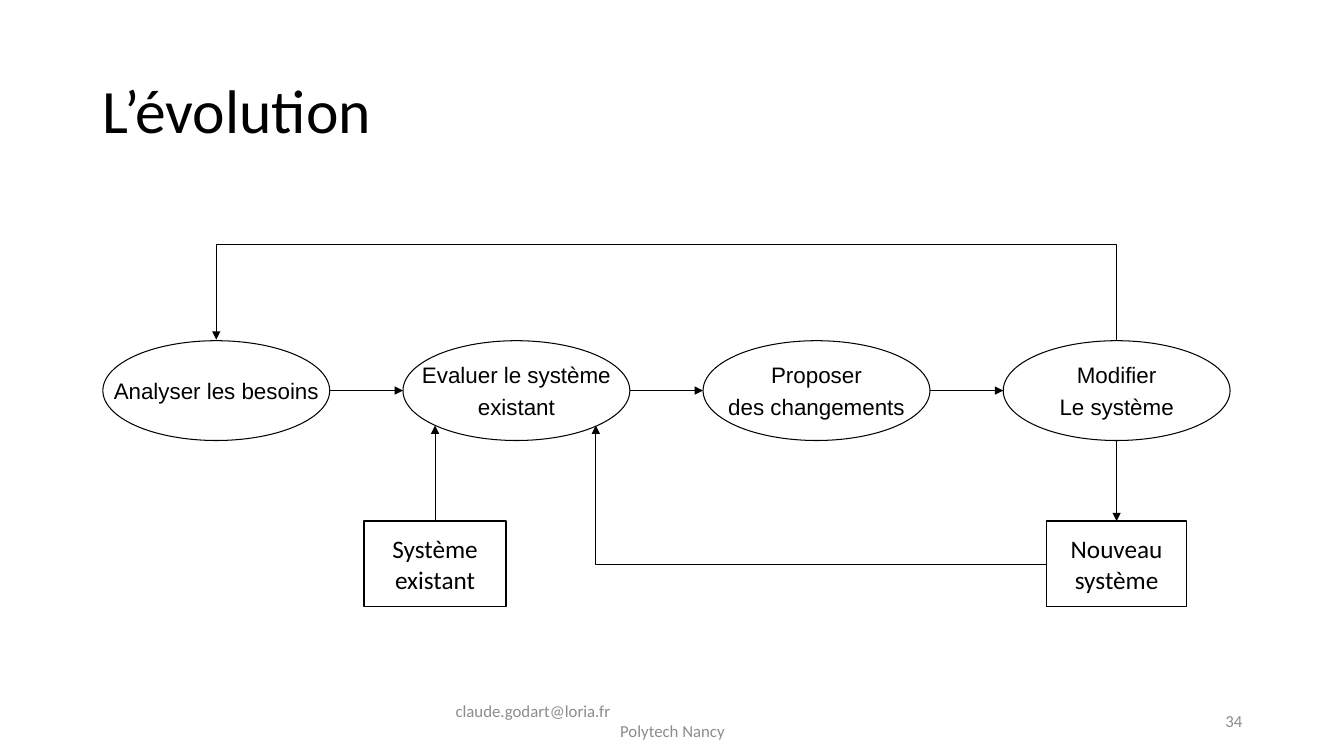
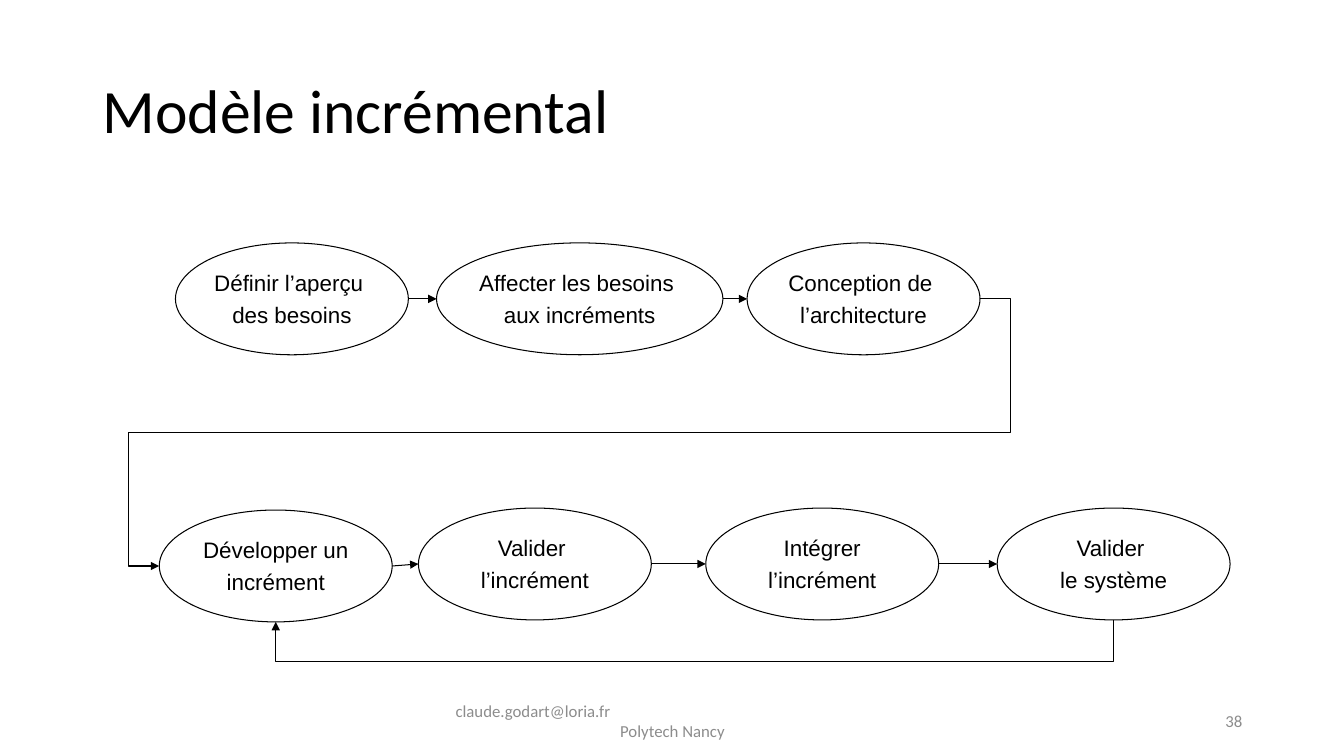
from dataclasses import dataclass

from lxml import etree
from pptx import Presentation
from pptx import util as u
from pptx.dml import color
from pptx.enum import shapes, text
from pptx.oxml import ns


@dataclass(frozen=True)
class Theme:
    ink: color.RGBColor = color.RGBColor(0x00, 0x00, 0x00)
    muted: color.RGBColor = color.RGBColor(0x8C, 0x8C, 0x8C)
    heading_font: str = "Calibri"
    step_font: str = "Arial"
    title_size: int = 44
    product_size: int = 18
    step_size: int = 16
    footer_size: int = 12
    step_spacing: float = 3.7
    step_line: float = 0.75
    product_line: float = 1


@dataclass(frozen=True)
class Box:
    left: float
    top: float
    width: float
    height: float

    def at(self, across, down):
        return self.left + across * self.width, self.top + down * self.height

    def inside(self, left, top, width, height):
        return Box(self.left + left, self.top + top, width, height)

    def lengths(self):
        return [u.Inches(value) for value in (self.left, self.top, self.width, self.height)]


THEME = Theme()
TITLE = Box(0.92, 0.4, 11.5, 1.45)
FOOTER = Box(4.42, 6.95, 4.5, 0.4)
NUMBER = Box(9.42, 6.95, 3, 0.4)
LEFT, CENTER, RIGHT = text.PP_ALIGN.LEFT, text.PP_ALIGN.CENTER, text.PP_ALIGN.RIGHT


def write(shape, content, font, size, ink, alignment, wrap=True, spacing=0):
    frame = shape.text_frame
    frame.text = content
    frame.word_wrap = wrap
    frame.vertical_anchor = text.MSO_ANCHOR.MIDDLE
    for paragraph in frame.paragraphs:
        paragraph.alignment = alignment
        paragraph.space_before = u.Pt(spacing)
        paragraph.font.name = font
        paragraph.font.size = u.Pt(size)
        paragraph.font.color.rgb = ink
    return frame.paragraphs


def add_text(slide, box, content, size, ink, alignment=LEFT):
    shape = slide.shapes.add_textbox(*box.lengths())
    return write(shape, content, THEME.heading_font, size, ink, alignment)


def add_outline(slide, kind, box, line_width):
    shape = slide.shapes.add_shape(kind, *box.lengths())
    shape.shadow.inherit = False
    shape.fill.background()
    shape.line.color.rgb = THEME.ink
    shape.line.width = u.Pt(line_width)
    return shape


def add_step(slide, box, content):
    shape = add_outline(slide, shapes.MSO_SHAPE.OVAL, box, THEME.step_line)
    write(shape, content, THEME.step_font, THEME.step_size, THEME.ink, CENTER,
          wrap=False, spacing=THEME.step_spacing)


def add_product(slide, box, content):
    shape = add_outline(slide, shapes.MSO_SHAPE.RECTANGLE, box, THEME.product_line)
    write(shape, content, THEME.heading_font, THEME.product_size, THEME.ink, CENTER)


def add_arrow(slide, start, end, line_width, kind=shapes.MSO_CONNECTOR.STRAIGHT):
    ends = [u.Inches(value) for value in (*start, *end)]
    connector = slide.shapes.add_connector(kind, *ends)
    connector.line.color.rgb = THEME.ink
    connector.line.width = u.Pt(line_width)
    line = connector.line._get_or_add_ln()
    etree.SubElement(line, ns.qn("a:tailEnd"), type="triangle")
    etree.SubElement(connector._element.spPr, ns.qn("a:effectLst"))
    return connector


def add_elbow(slide, start, end, line_width, preset, rotation=0, flip=None, bends=()):
    connector = add_arrow(slide, start, end, line_width, shapes.MSO_CONNECTOR.ELBOW)
    width, height = abs(end[0] - start[0]), abs(end[1] - start[1])
    if rotation in (90, 270):
        width, height = height, width
    center_x, center_y = (start[0] + end[0]) / 2, (start[1] + end[1]) / 2
    box = Box(center_x - width / 2, center_y - height / 2, width, height)
    connector.left, connector.top, connector.width, connector.height = box.lengths()

    properties = connector._element.spPr
    transform = properties.find(ns.qn("a:xfrm"))
    for name in ("flipH", "flipV"):
        transform.attrib.pop(name, None)
    transform.set("rot", str(rotation * 60000))
    if flip:
        transform.set(flip, "1")

    geometry = properties.find(ns.qn("a:prstGeom"))
    geometry.set("prst", preset)
    adjustments = geometry.find(ns.qn("a:avLst"))
    for index, distance in enumerate(bends, 1):
        extent = width if index % 2 else height
        share = round(distance / extent * 100000)
        etree.SubElement(adjustments, ns.qn("a:gd"), name=f"adj{index}", fmla=f"val {share}")


def add_chain(slide, steps, line_width):
    for box, content in steps:
        add_step(slide, box, content)
    boxes = [box for box, _ in steps]
    for before, after in zip(boxes, boxes[1:]):
        add_arrow(slide, before.at(1, 0.5), after.at(0, 0.5), line_width)
    return boxes


def add_frame(slide, title, number):
    paragraphs = add_text(slide, TITLE, title, THEME.title_size, THEME.ink)
    paragraphs[0].line_spacing = 0.9
    _, school = add_text(slide, FOOTER, "claude.godart@loria.fr\nPolytech Nancy",
                         THEME.footer_size, THEME.muted)
    school.alignment = CENTER
    add_text(slide, NUMBER, str(number), THEME.footer_size, THEME.muted, RIGHT)


def draw_evolution(slide, area):
    line_width = 0.5
    labels = ["Analyser les besoins", "Evaluer le système\nexistant",
              "Proposer\ndes changements", "Modifier\nLe système"]
    step_width = 2.25
    pitch = (area.width - step_width) / (len(labels) - 1)
    steps = [(area.inside(index * pitch, 0.97, step_width, 0.99), label)
             for index, label in enumerate(labels)]
    analyse, evaluate, _, modify = add_chain(slide, steps, line_width)

    existing = area.inside(2.59, 2.76, 1.41, 0.85)
    renewed = area.inside(9.36, 2.76, 1.39, 0.85)
    add_product(slide, existing, "Système existant")
    add_product(slide, renewed, "Nouveau\nsystème")

    input_x, input_y = existing.at(0.5, 0)
    evaluate_foot = evaluate.top + 0.85 * evaluate.height
    add_arrow(slide, (input_x, input_y), (input_x, evaluate_foot), line_width)
    add_arrow(slide, modify.at(0.5, 1), renewed.at(0.5, 0), line_width)
    add_elbow(slide, renewed.at(0, 0.5), (evaluate.at(0.85, 0)[0], evaluate_foot),
              line_width, "bentConnector2", rotation=180)
    end_x, end_y = analyse.at(0.5, 0)
    add_elbow(slide, modify.at(0.5, 0), (end_x, end_y - 0.01), line_width,
              "bentConnector3", rotation=270, flip="flipV", bends=[modify.top - area.top])


def draw_increments(slide, area):
    line_width = THEME.step_line
    step_width, step_height = 2.31, 1.11
    planning = [(0.46, step_width, "Définir l’aperçu \ndes besoins"),
                (3.05, 2.84, "Affecter les besoins \naux incréments"),
                (6.13, step_width, "Conception de \nl’architecture")]
    cycle = [(0.3, 2.65, "Développer un\nincrément"),
             (2.87, 2.63, "Valider \nl’incrément"),
             (5.72, 2.63, "Intégrer\nl’incrément"),
             (8.61, 2.63, "Valider \nle système")]
    planned = add_chain(slide, [(area.inside(left, 0, width, step_height), label)
                                for left, width, label in planning], line_width)
    cycled = add_chain(slide, [(area.inside(left, top, step_width, step_height), label)
                               for left, top, label in cycle], line_width)

    start, end = planned[-1].at(1, 0.5), cycled[0].at(0, 0.5)
    span, margin = start[0] - end[0], end[0] - area.left
    add_elbow(slide, start, end, line_width, "bentConnector5", flip="flipH",
              bends=[-margin, (end[1] - start[1]) / 2, span + margin])
    loop_start, loop_end = cycled[-1].at(0.5, 1), cycled[0].at(0.5, 1)
    add_elbow(slide, loop_start, loop_end, line_width, "bentConnector3",
              rotation=90, bends=[area.top + area.height - loop_start[1]])


def main():
    presentation = Presentation()
    presentation.slide_width = u.Inches(13.33)
    presentation.slide_height = u.Inches(7.5)
    pages = [("L’évolution", 34, draw_evolution, Box(1.02, 2.41, 11.18, 3.61)),
             ("Modèle incrémental", 38, draw_increments, Box(1.28, 2.41, 10.92, 4.15))]
    for title, number, draw, area in pages:
        slide = presentation.slides.add_slide(presentation.slide_layouts[6])
        add_frame(slide, title, number)
        draw(slide, area)
    presentation.save("out.pptx")


if __name__ == "__main__":
    main()
